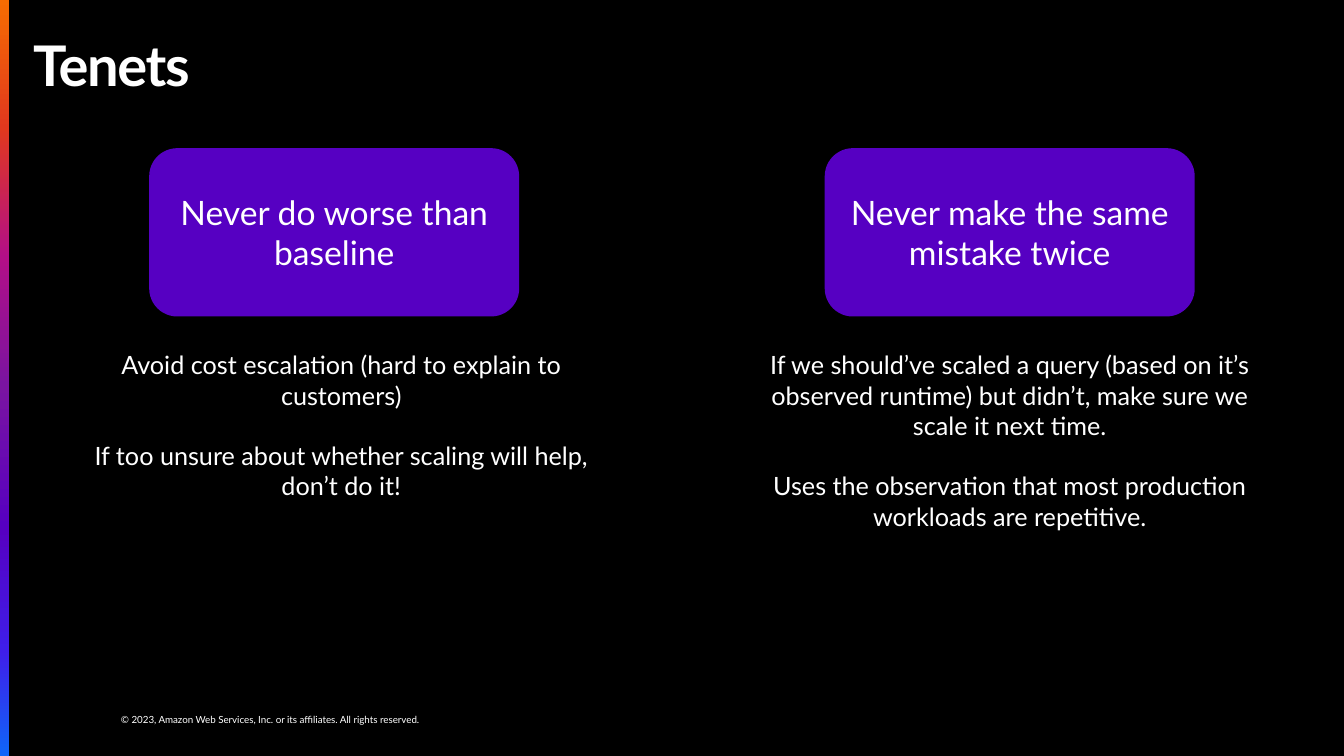
from lxml import etree
from pptx import Presentation
from pptx.dml.color import RGBColor
from pptx.enum.shapes import MSO_SHAPE
from pptx.enum.text import MSO_ANCHOR, PP_ALIGN
from pptx.oxml.ns import qn
from pptx.util import Inches, Pt

# Content
TITLE = "Tenets"
FOOTER = "© 2023, Amazon Web Services, Inc. or its affiliates. All rights reserved."
# heading, left of its notes, notes
TENETS = [
    ("Never do worse than baseline", 0.85, [
        "Avoid cost escalation (hard to explain to customers)",
        "If too unsure about whether scaling will help, don’t do it!",
    ]),
    ("Never make the same mistake twice", 7.48, [
        "If we should’ve scaled a query (based on it’s observed runtime) "
        "but didn’t, make sure we scale it next time.",
        "Uses the observation that most production workloads are repetitive.",
    ]),
]
STOPS = [(0, "F66C02"), (17, "E1381E"), (34, "B20F87"), (51, "7A14A1"),
         (70, "5600C2"), (86, "3F1EE9"), (100, "0F65F9")]

# Style
FONT = "Lato"
BLACK = RGBColor(0x00, 0x00, 0x00)
WHITE = RGBColor(0xFF, 0xFF, 0xFF)
PURPLE = RGBColor(0x56, 0x00, 0xC2)
RECT, ROUND = MSO_SHAPE.RECTANGLE, MSO_SHAPE.ROUNDED_RECTANGLE
LEFT, CENTER = PP_ALIGN.LEFT, PP_ALIGN.CENTER
MIDDLE = MSO_ANCHOR.MIDDLE

# Layout in inches
WIDTH, HEIGHT = 13.33, 7.5
CARD_X, CARD_STEP, CARD_Y = 1.48, 6.7, 1.47
CARD_W, CARD_H = 3.67, 1.67
NOTE_Y, NOTE_W, NOTE_H = 3.42, 5.07, 1.8

prs = Presentation()
prs.slide_width, prs.slide_height = Inches(WIDTH), Inches(HEIGHT)
slide = prs.slides.add_slide(prs.slide_layouts[6])
slide.background.fill.solid()
slide.background.fill.fore_color.rgb = BLACK


def write(frame, lines, size, align=LEFT, gap=0):
    """Fill a frame with paragraphs, set apart by gap points."""
    frame.word_wrap = True
    frame.text = "\n".join(lines)
    for i, para in enumerate(frame.paragraphs):
        para.alignment = align
        if i:
            para.space_before = Pt(gap)
        for run in para.runs:
            run.font.name = FONT
            run.font.size = Pt(size)
            run.font.color.rgb = WHITE


def add_text(box, lines, size, pad=0.05, **style):
    frame = slide.shapes.add_textbox(*map(Inches, box)).text_frame
    frame.margin_left = frame.margin_right = 0
    frame.margin_top = frame.margin_bottom = Inches(pad)
    write(frame, lines, size, **style)
    return frame


def add_block(kind, box):
    block = slide.shapes.add_shape(kind, *map(Inches, box))
    block.shadow.inherit = False
    block.line.fill.background()
    return block


# Gradient bar on the left edge
bar = add_block(RECT, (0, 0, 0.09, HEIGHT))
bar.fill.gradient()
bar.fill.gradient_angle = 270
stops = bar._element.spPr.find(".//" + qn("a:gsLst"))
for old in list(stops):
    stops.remove(old)
for pos, color in STOPS:
    stop = etree.SubElement(stops, qn("a:gs"), pos=str(pos * 1000))
    etree.SubElement(stop, qn("a:srgbClr"), val=color)

# Title and footer
title = add_text((0.33, 0.33, 12.67, 0.7), [TITLE], 40).paragraphs[0]
title.line_spacing = 0.9
title.runs[0].font.bold = True
title.runs[0].font._element.set("spc", "-100")
add_text((1.2, 7.08, 4.33, 0.12), [FOOTER], 7, pad=0)

# Tenet cards with their notes
for i, (head, note_x, notes) in enumerate(TENETS):
    card = add_block(ROUND, (CARD_X + i * CARD_STEP, CARD_Y, CARD_W, CARD_H))
    card.fill.solid()
    card.fill.fore_color.rgb = PURPLE
    card.text_frame.vertical_anchor = MIDDLE
    write(card.text_frame, [head], 24, CENTER)
    add_text((note_x, NOTE_Y, NOTE_W, NOTE_H), notes, 18, align=CENTER, gap=21.6)

prs.save("out.pptx")
